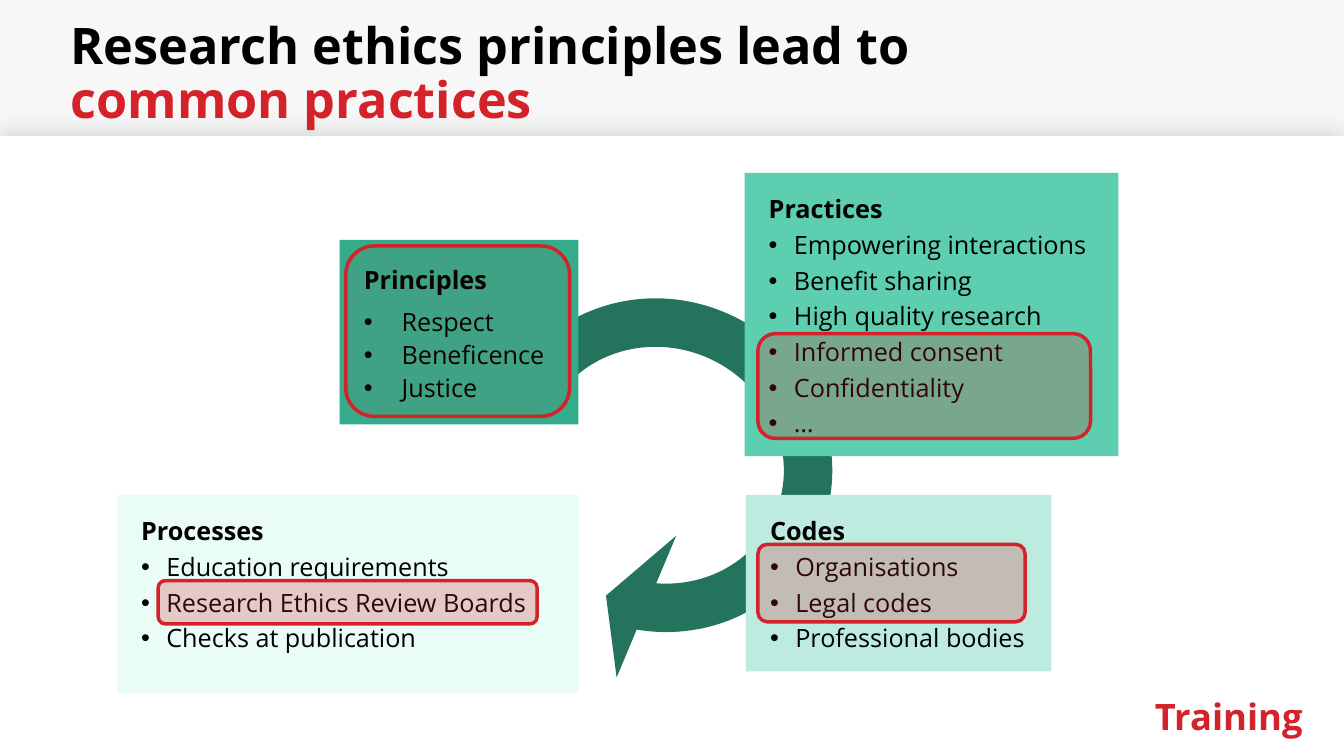
from lxml.etree import SubElement
from pptx import Presentation
from pptx.dml.color import RGBColor
from pptx.enum.shapes import MSO_SHAPE as SHAPE
from pptx.enum.text import MSO_ANCHOR as ANCHOR, MSO_AUTO_SIZE as AUTO, PP_ALIGN as ALIGN
from pptx.oxml.ns import qn
from pptx.util import Pt

FONT = "Open Sans"
COLORS = {
    "black": "000000", "red": "D32229", "footer": "D2222A",
    "band": "F7F7F7", "page": "FFFFFF", "arrow": "23735D",
    "principles": "34AC8B", "practices": "5DCEAF",
    "codes": "BEEBDF", "processes": "EAFCF6",
}
TITLE = [("Research ethics principles lead to ", "black"), ("common practices", "red")]
FOOTER = "Training"

# Positions are left, top, width, height in points
TITLE_AT = (43.2, 10.1, 655.2, 87.1)
FOOTER_AT = (817.9, 492.5, 129.6, 38.9)
BANDS = [("band", (-0.7, -0.7, 960.7, 416.9)), ("page", (-0.7, 97.2, 960.7, 442.8))]
ARROW_AT = (316.1, 171.4, 311.8, 321.8)
ARROW_TURN = 114.4
ARROW_ADJUST = (0.111, 10.197, 204.853, 62.763, 0.176)

LOOSE = {"anchor": ANCHOR.MIDDLE, "spacing": 1.1, "after": 0, "indent": 27}
TIGHT = {"anchor": ANCHOR.TOP, "spacing": 0.9, "after": 6, "indent": 18}
BOXES = [
    ("Principles", ["Respect", "Beneficence", "Justice"],
     (242.6, 171.4, 170.6, 131.8), LOOSE),
    ("Practices", ["Empowering interactions", "Benefit sharing", "High quality research",
                   "Informed consent", "Confidentiality", "…"],
     (531.8, 123.5, 267.1, 202.3), TIGHT),
    ("Codes", ["Organisations", "Legal codes", "Professional bodies"],
     (532.8, 353.5, 218.2, 126), TIGHT),
    ("Processes", ["Education requirements", "Research Ethics Review Boards",
                   "Checks at publication"],
     (83.5, 353.5, 329.8, 141.8), TIGHT),
]
# Position, corner radius ratio, opacity in percent
HIGHLIGHTS = [
    ((541.4, 238.3, 237.6, 74.9), 0.167, 23),
    ((113, 414.7, 270.7, 31), 0.167, 23),
    ((541.4, 388.8, 190.8, 55.4), 0.121, 23),
    ((247, 175.7, 159.8, 121.7), 0.167, 7),
]


def rgb(name):
    return RGBColor.from_string(COLORS[name])


def points(at):
    return [Pt(v) for v in at]


def add_filled(s, kind, at, color):
    sp = s.shapes.add_shape(kind, *points(at))
    sp.shadow.inherit = False
    sp.fill.solid()
    sp.fill.fore_color.rgb = rgb(color)
    sp.line.fill.background()
    return sp


def add_run(p, text, size, color="black", bold=False):
    r = p.add_run()
    r.text = text
    for name, value in {"size": Pt(size), "name": FONT, "bold": bold}.items():
        setattr(r.font, name, value)
    r.font.color.rgb = rgb(color)


def add_bullet(p, indent):
    pPr = p._p.get_or_add_pPr()
    pPr.set("marL", str(Pt(indent)))
    pPr.set("indent", str(-Pt(indent)))
    SubElement(pPr, qn("a:buFont"), typeface="Arial")
    SubElement(pPr, qn("a:buChar"), char="•")


def add_upward_shadow(sp):
    effects = sp._element.spPr.find(qn("a:effectLst"))
    shadow = SubElement(effects, qn("a:outerShdw"), blurRad=str(Pt(16)), dist=str(Pt(3)),
                        dir=str(279 * 60000), algn="b", rotWithShape="0")
    color = SubElement(shadow, qn("a:srgbClr"), val=COLORS["black"])
    SubElement(color, qn("a:alpha"), val="12000")


def add_box(s, heading, items, at, style):
    sp = add_filled(s, SHAPE.RECTANGLE, at, heading.lower())
    tf = sp.text_frame
    tf.word_wrap = True
    tf.vertical_anchor = style["anchor"]
    for side in ("left", "top", "right", "bottom"):
        setattr(tf, f"margin_{side}", Pt(17.3))
    for i, text in enumerate([heading] + items):
        p = tf.add_paragraph() if i else tf.paragraphs[0]
        layout = {"alignment": ALIGN.LEFT, "line_spacing": style["spacing"],
                  "space_after": Pt(style["after"] if i else 6)}
        for name, value in layout.items():
            setattr(p, name, value)
        if i:
            add_bullet(p, style["indent"])
        add_run(p, text, 18, bold=not i)


def add_highlight(s, at, radius, opacity):
    sp = add_filled(s, SHAPE.ROUNDED_RECTANGLE, at, "red")
    sp.adjustments[0] = radius
    color = sp._element.spPr.find(qn("a:solidFill")).find(qn("a:srgbClr"))
    SubElement(color, qn("a:alpha"), val=str(opacity * 1000))
    sp.line.color.rgb = rgb("red")
    sp.line.width = Pt(2.5)


def add_title(s):
    title = s.shapes.title
    title.element.getparent().append(title.element)  # bring in front of the bands
    for name, value in zip(("left", "top", "width", "height"), points(TITLE_AT)):
        setattr(title, name, value)
    tf = title.text_frame
    for name, value in {"word_wrap": True, "auto_size": AUTO.NONE,
                        "vertical_anchor": ANCHOR.MIDDLE}.items():
        setattr(tf, name, value)
    p = tf.paragraphs[0]
    p.alignment = ALIGN.LEFT
    p.line_spacing = 0.9
    for text, color in TITLE:
        add_run(p, text, 36, color, True)


def add_footer(s):
    tf = s.shapes.add_textbox(*points(FOOTER_AT)).text_frame
    tf.word_wrap = True
    tf.margin_right = 0
    add_run(tf.paragraphs[0], FOOTER, 26, "footer", True)


def main():
    prs = Presentation()
    prs.slide_width, prs.slide_height = Pt(960), Pt(540)
    s = prs.slides.add_slide(prs.slide_layouts[5])
    bands = [add_filled(s, SHAPE.RECTANGLE, at, color) for color, at in BANDS]
    add_upward_shadow(bands[-1])
    add_footer(s)
    arrow = add_filled(s, SHAPE.CIRCULAR_ARROW, ARROW_AT, "arrow")
    arrow.rotation = ARROW_TURN
    for i, value in enumerate(ARROW_ADJUST):
        arrow.adjustments[i] = value
    add_title(s)
    for box in BOXES:
        add_box(s, *box)
    for highlight in HIGHLIGHTS:
        add_highlight(s, *highlight)
    prs.save("out.pptx")


if __name__ == "__main__":
    main()
